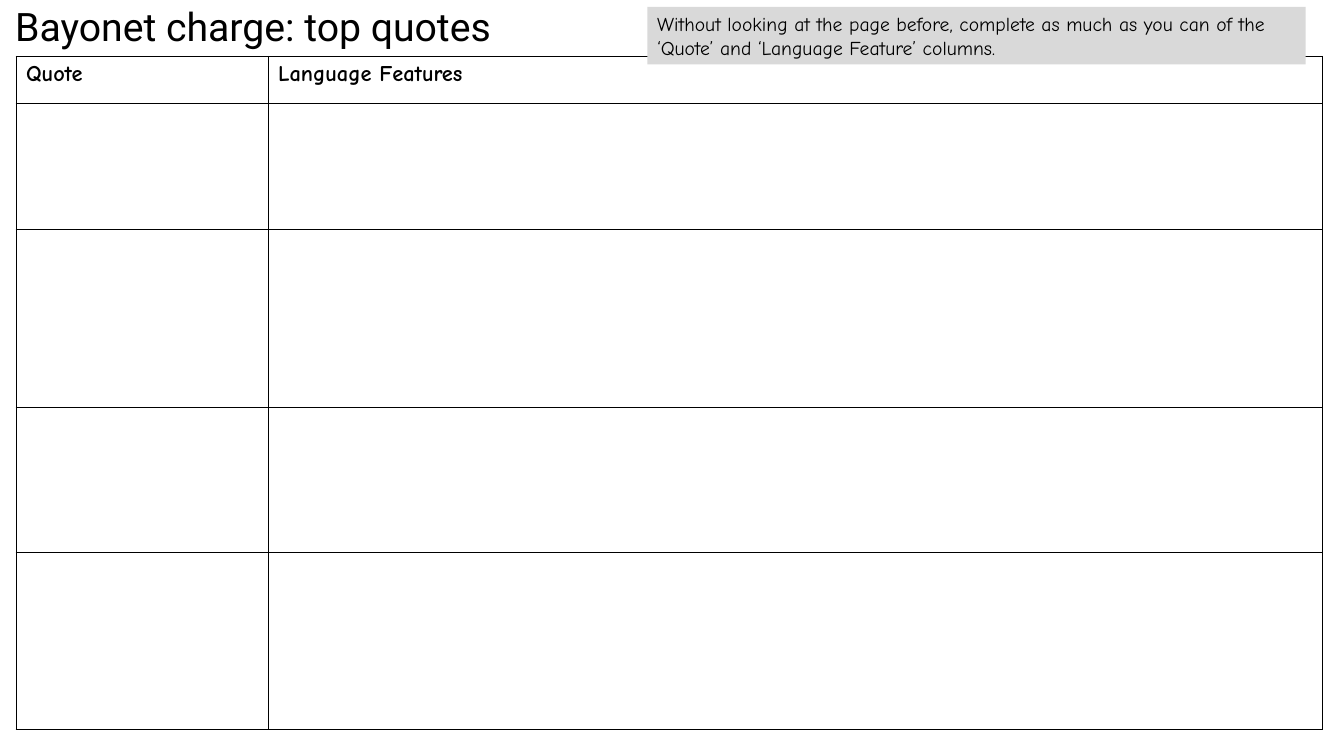
from dataclasses import dataclass

from lxml.etree import SubElement
from pptx import Presentation
from pptx.dml.color import RGBColor
from pptx.enum.shapes import MSO_SHAPE
from pptx.enum.text import MSO_ANCHOR, MSO_AUTO_SIZE, PP_ALIGN
from pptx.oxml.ns import qn
from pptx.util import Inches, Pt


@dataclass(frozen=True)
class Theme:
    ink: str = "000000"
    note_fill: str = "D9D9D9"
    title_font: str = "Roboto"
    body_font: str = "Comic Neue"
    title_size: int = 28
    header_size: int = 16
    note_size: int = 14
    rule_width: int = 1


@dataclass(frozen=True)
class Box:
    left: int
    top: int
    width: int
    height: int

    def share(self, left, top, width, height):
        return Box(
            self.left + round(self.width * left / 100),
            self.top + round(self.height * top / 100),
            round(self.width * width / 100),
            round(self.height * height / 100),
        )

    def bounds(self):
        return self.left, self.top, self.width, self.height


THEME = Theme()
HEADERS = ("Quote", "Language Features")
COLUMN_WEIGHTS = (2.5, 10.46)
ROW_WEIGHTS = (0.47, 1.25, 1.76, 1.44, 1.76)


def format_text(frame, font_name, size, bold=False):
    for paragraph in frame.paragraphs:
        paragraph.alignment = PP_ALIGN.LEFT
        for run in paragraph.runs:
            run.font.name = font_name
            run.font.size = Pt(size)
            run.font.bold = bold
            run.font.color.rgb = RGBColor.from_string(THEME.ink)


def rule_cell(cell):
    properties = cell._tc.get_or_add_tcPr()
    for edge in ("a:lnL", "a:lnR", "a:lnT", "a:lnB"):
        rule = SubElement(properties, qn(edge), w=str(Pt(THEME.rule_width)))
        ink = SubElement(rule, qn("a:solidFill"))
        SubElement(ink, qn("a:srgbClr"), val=THEME.ink)


def place_title(slide, box):
    heading = slide.shapes.title
    heading.left, heading.top, heading.width, heading.height = box.bounds()
    frame = heading.text_frame
    frame.text = "Bayonet charge: top quotes"
    frame.word_wrap = True
    frame.auto_size = MSO_AUTO_SIZE.SHAPE_TO_FIT_TEXT
    frame.vertical_anchor = MSO_ANCHOR.TOP
    format_text(frame, THEME.title_font, THEME.title_size)


def place_quote_table(slide, box):
    quotes = slide.shapes.add_table(
        len(ROW_WEIGHTS), len(COLUMN_WEIGHTS), *box.bounds()
    ).table
    quotes.first_row = False
    quotes.horz_banding = False
    for column, weight in zip(quotes.columns, COLUMN_WEIGHTS):
        column.width = round(box.width * weight / sum(COLUMN_WEIGHTS))
    for row, weight in zip(quotes.rows, ROW_WEIGHTS):
        row.height = round(box.height * weight / sum(ROW_WEIGHTS))
    for cell in quotes.iter_cells():
        rule_cell(cell)
        cell.fill.background()
    for column_index, header in enumerate(HEADERS):
        frame = quotes.cell(0, column_index).text_frame
        frame.text = header
        format_text(frame, THEME.body_font, THEME.header_size, bold=True)


def place_instruction(slide, box):
    instruction = slide.shapes.add_shape(MSO_SHAPE.RECTANGLE, *box.bounds())
    instruction.shadow.inherit = False
    instruction.fill.solid()
    instruction.fill.fore_color.rgb = RGBColor.from_string(THEME.note_fill)
    instruction.line.fill.background()
    frame = instruction.text_frame
    frame.text = (
        "Without looking at the page before, complete as much as you can of the "
        "‘Quote’ and ‘Language Feature’ columns."
    )
    frame.word_wrap = True
    frame.auto_size = MSO_AUTO_SIZE.SHAPE_TO_FIT_TEXT
    frame.vertical_anchor = MSO_ANCHOR.TOP
    format_text(frame, THEME.body_font, THEME.note_size)


def build_worksheet(presentation):
    slide = presentation.slides.add_slide(
        presentation.slide_layouts.get_by_name("Title Only")
    )
    page = Box(0, 0, presentation.slide_width, presentation.slide_height)
    place_title(slide, page.share(0.38, -0.4, 57.46, 7.6))
    place_quote_table(slide, page.share(1.2, 7.47, 97.22, 89.07))
    place_instruction(slide, page.share(48.16, 0.93, 48.99, 7.6))


def main():
    presentation = Presentation()
    presentation.slide_width = Inches(13.33)
    presentation.slide_height = Inches(7.5)
    build_worksheet(presentation)
    presentation.save("out.pptx")


if __name__ == "__main__":
    main()
